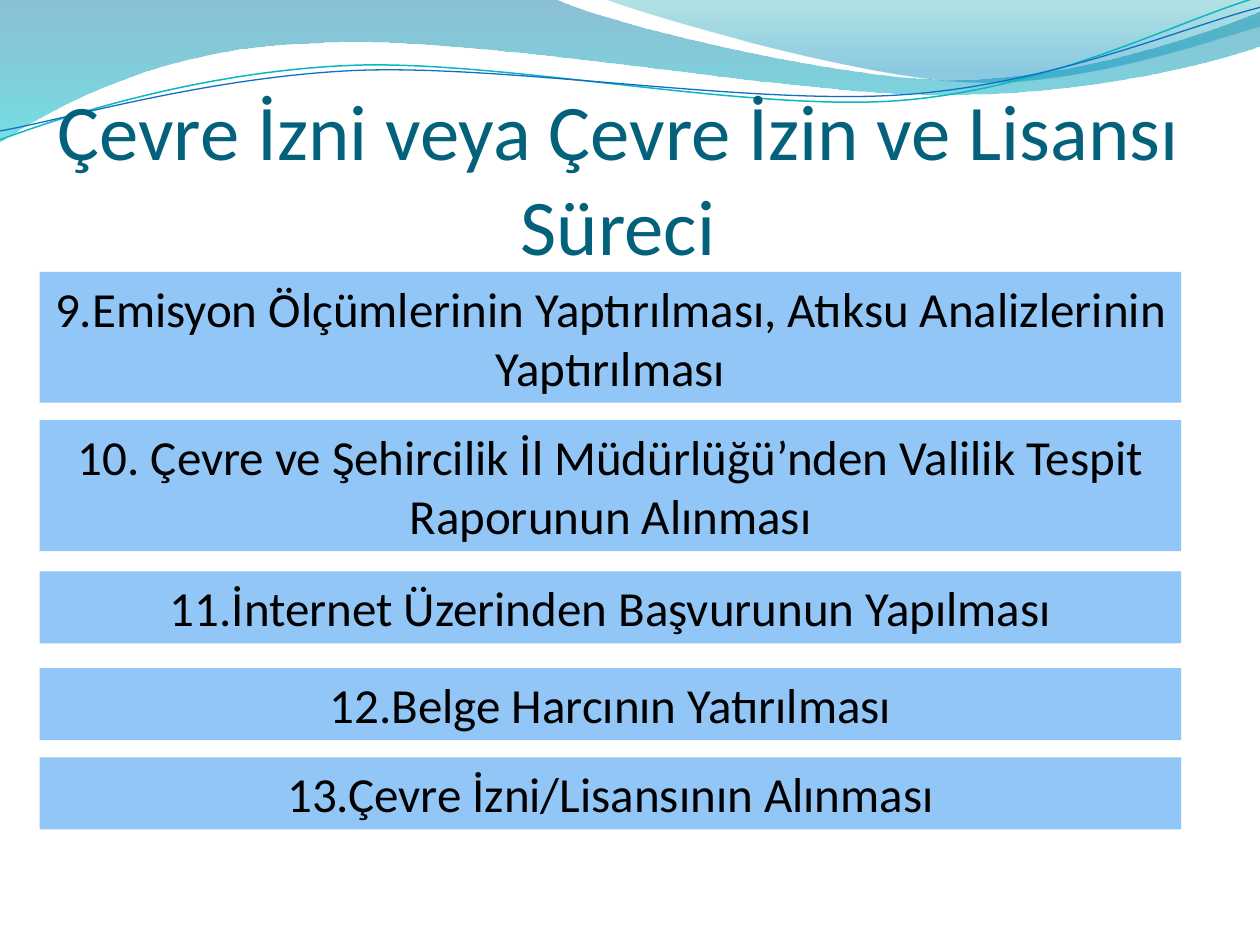
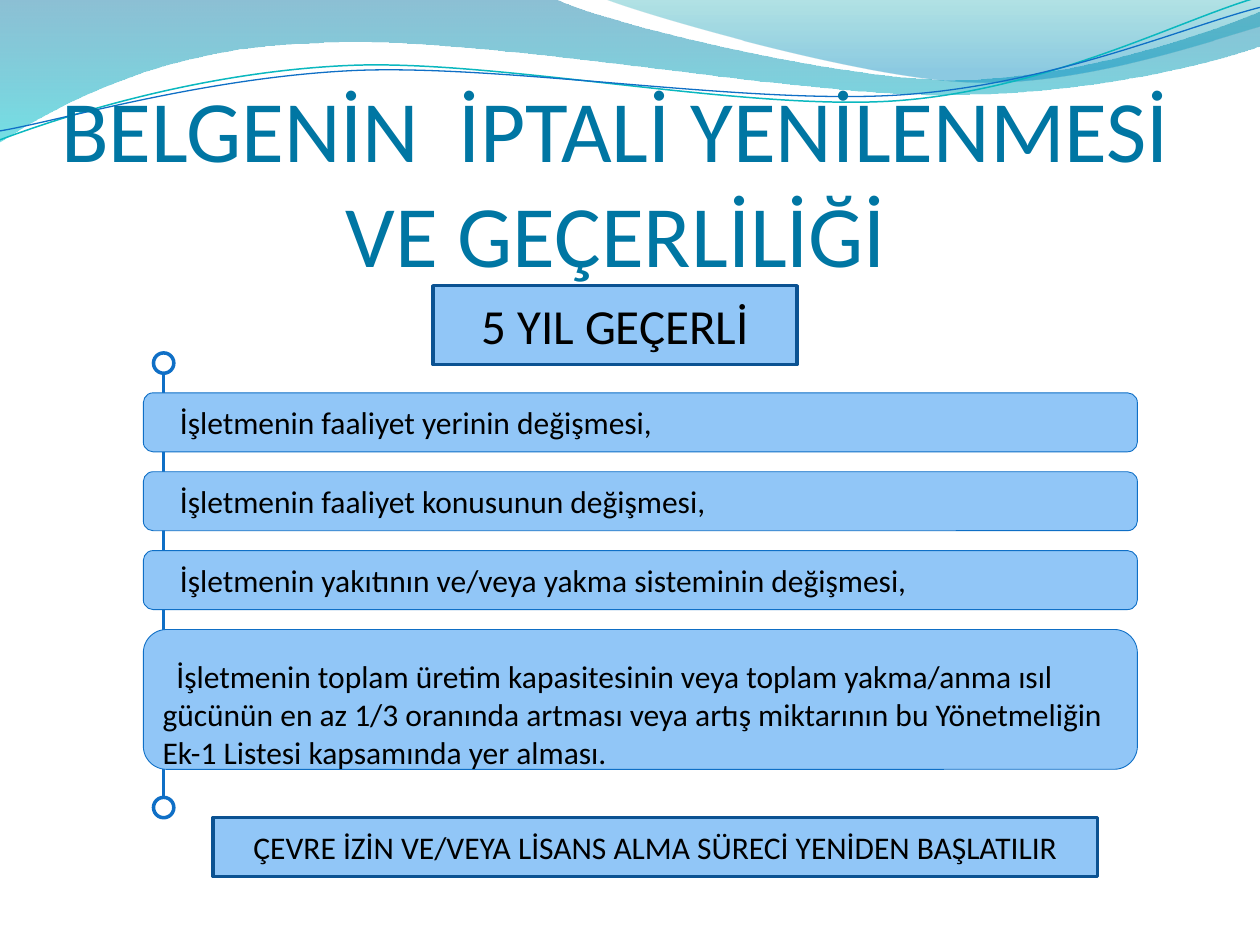
from dataclasses import dataclass
from typing import Any, Optional

from lxml import etree
from pptx import Presentation
from pptx import util as u
from pptx.dml.color import RGBColor
from pptx.enum import shapes, text
from pptx.oxml import ns

PALE_BLUE = RGBColor(0x91, 0xC6, 0xF7)
BLUE = RGBColor(0x0F, 0x6F, 0xC6)
DARK_BLUE = RGBColor(0x0B, 0x52, 0x92)
TEAL = RGBColor(0x0A, 0xB8, 0xBF)
PETROL = RGBColor(0x04, 0x61, 0x7B)
TITLE_BLUE = RGBColor(0x00, 0x76, 0xA3)
BLACK = RGBColor(0, 0, 0)
WHITE = RGBColor(0xFF, 0xFF, 0xFF)
WAVE_BLUE, WAVE_CYAN = RGBColor(0x00, 0x74, 0xA1), RGBColor(0x00, 0xC6, 0xCF)
CREST_GREEN, CREST_BLUE = RGBColor(0x00, 0xA1, 0xA9), RGBColor(0x00, 0x8B, 0xBF)

FONT = "Calibri"
Point = tuple[float, float]


@dataclass(frozen=True)
class GradientStop:
    position: float
    color: RGBColor
    opacity: int


@dataclass(frozen=True)
class Wave:
    """Each segment holds one point (a line) or three (a cubic curve), in cm."""
    start: Point
    segments: list[list[Point]]
    stops: tuple[GradientStop, ...] = ()
    line_color: Optional[RGBColor] = None
    line_width: float = 0


@dataclass(frozen=True)
class Box:
    """Position and size in cm; line width and font size in points."""
    left: float
    top: float
    width: float
    height: float
    wording: str = ""
    font_size: float = 28
    kind: shapes.MSO_SHAPE = shapes.MSO_SHAPE.RECTANGLE
    fill: RGBColor = PALE_BLUE
    line_color: Optional[RGBColor] = None
    line_width: float = 0
    alignment: text.PP_ALIGN = text.PP_ALIGN.CENTER
    first_indent: float = 0


WAVES = [
    Wave((0, 0), [
        [(11.18, -0.03)],
        [(12.09, 0.43), (16.87, 1.6), (19.25, 1.6)],
        [(21.67, 1.6), (24.33, 0.66), (25.4, 0.23)],
        [(25.43, 0.91)],
        [(24.97, 1.12), (22.1, 1.93), (18.95, 1.91)],
        [(15.8, 1.91), (9.7, 0.71), (6.53, 0.86)],
        [(3.28, 0.91), (1.17, 2.11), (-0.03, 2.87)],
        [(0, 0)],
    ], stops=(GradientStop(0, WAVE_BLUE, 45), GradientStop(1, WAVE_CYAN, 55))),
    Wave((12.17, -0.03), [
        [(12.93, 0.28), (17.32, 1.57), (19.53, 1.65)],
        [(21.74, 1.75), (24.41, 0.81), (25.4, 0.53)],
        [(25.4, 0)],
        [(12.17, -0.03)],
    ], stops=(GradientStop(0, CREST_GREEN, 30), GradientStop(0.8, CREST_BLUE, 45))),
    Wave((0, 2.82), [
        [(1.22, 2.36), (4.01, 1.45), (7.04, 1.32)],
        [(10.03, 1.19), (15.06, 2.26), (18.11, 2.03)],
        [(21.16, 1.8), (23.83, 0.38), (25.35, -0.05)],
    ], line_color=TEAL, line_width=0.85),
    Wave((0, 2.64), [
        [(1.19, 2.44), (4.17, 1.55), (7.19, 1.42)],
        [(10.24, 1.3), (15.16, 2.13), (18.21, 1.91)],
        [(21.23, 1.7), (23.9, 0.53), (25.4, 0.15)],
    ], line_color=BLUE, line_width=0.75),
]

STEPS = [
    (5.48, 2.64, "9.Emisyon Ölçümlerinin Yaptırılması, Atıksu Analizlerinin Yaptırılması"),
    (8.47, 2.64, "10. Çevre ve Şehircilik İl Müdürlüğü’nden Valilik Tespit Raporunun Alınması"),
    (11.52, 1.45, "11.İnternet Üzerinden Başvurunun Yapılması"),
    (13.47, 1.45, "12.Belge Harcının Yatırılması"),
    (15.27, 1.45, "13.Çevre İzni/Lisansının Alınması"),
]

CHANGES = [
    "İşletmenin faaliyet yerinin değişmesi,",
    "İşletmenin faaliyet konusunun değişmesi,",
    "İşletmenin yakıtının ve/veya yakma sisteminin değişmesi,",
]
CAPACITY_CHANGE = (
    "İşletmenin toplam üretim kapasitesinin veya toplam yakma/anma ısıl "
    "gücünün en az 1/3 oranında artması veya artış miktarının bu Yönetmeliğin "
    "Ek-1 Listesi kapsamında yer alması."
)
CHANGE_LEFT, CHANGE_WIDTH = 2.89, 20.04
CHANGE_TOP, CHANGE_HEIGHT, CHANGE_GAP = 7.92, 1.19, 0.4
CHANGE_FORMAT = {
    "font_size": 18,
    "kind": shapes.MSO_SHAPE.ROUNDED_RECTANGLE,
    "line_color": BLUE,
    "line_width": 0.5,
    "alignment": text.PP_ALIGN.LEFT,
}
FRAME_FORMAT = {"line_color": DARK_BLUE, "line_width": 2}
RAIL_X, RAIL_TOP, RAIL_BOTTOM, RING_SIZE = 3.3, 7.32, 16.28, 0.41


def set_values(target: Any, values: dict[str, Any]) -> None:
    for name, value in values.items():
        setattr(target, name, value)


def set_line(line: Any, color: Optional[RGBColor], width: float) -> None:
    if color is None:
        line.fill.background()
    else:
        line.color.rgb = color
        line.width = u.Pt(width)


def write_text(shape: Any, wording: str, size: float, color: RGBColor,
               alignment: text.PP_ALIGN, frame_values: dict[str, Any]) -> Any:
    frame = shape.text_frame
    set_values(frame, {"word_wrap": True, **frame_values})
    paragraph = frame.paragraphs[0]
    paragraph.alignment = alignment
    run = paragraph.add_run()
    run.text = wording
    set_values(run.font, {"name": FONT, "size": u.Pt(size)})
    run.font.color.rgb = color
    return paragraph


def fill_gradient(shape: Any, stops: tuple[GradientStop, ...]) -> None:
    shape.fill.gradient()
    shape.fill.gradient_angle = 270
    for target, stop in zip(shape.fill.gradient_stops, stops):
        target.position = stop.position
        target.color.rgb = stop.color
    colors = shape.element.spPr.iter(ns.qn("a:srgbClr"))
    for color, stop in zip(list(colors), stops):
        etree.SubElement(color, ns.qn("a:alpha"), val=str(stop.opacity * 1000))


def bend_segments(shape: Any, segments: list[list[Point]]) -> None:
    """Join the straight lines through each curve's controls into one cubic curve."""
    lines = iter(list(shape.element.spPr.iter(ns.qn("a:lnTo"))))
    for segment in segments:
        first, *others = [next(lines) for _ in segment]
        if others:
            first.tag = ns.qn("a:cubicBezTo")
        for line in others:
            first.append(line[0])
            line.getparent().remove(line)


def add_wave(slide: Any, wave: Wave) -> Any:
    points = [wave.start] + [point for segment in wave.segments for point in segment]
    vertices = [(u.Cm(x), u.Cm(y)) for x, y in points]
    builder = slide.shapes.build_freeform(*vertices[0], scale=1.0)
    builder.add_line_segments(vertices[1:], close=bool(wave.stops))
    shape = builder.convert_to_shape()
    bend_segments(shape, wave.segments)
    shape.shadow.inherit = False
    if wave.stops:
        fill_gradient(shape, wave.stops)
    else:
        shape.fill.background()
    set_line(shape.line, wave.line_color, wave.line_width)
    return shape


def move_to_master(slide: Any, shape: Any) -> None:
    """Let every slide show the shape."""
    slide.slide_layout.slide_master.shapes.element.append(shape.element)


def add_title(slide: Any, box: Box, color: RGBColor) -> None:
    shape = slide.shapes.add_textbox(
        *(u.Cm(v) for v in (box.left, box.top, box.width, box.height)))
    write_text(shape, box.wording, box.font_size, color, box.alignment, {
        "vertical_anchor": text.MSO_ANCHOR.BOTTOM,
        "margin_left": 0, "margin_right": 0, "margin_bottom": 0,
        "margin_top": u.Cm(0.13),
    })


def add_box(slide: Any, box: Box, **frame_values: Any) -> None:
    shape = slide.shapes.add_shape(
        box.kind, *(u.Cm(v) for v in (box.left, box.top, box.width, box.height)))
    shape.shadow.inherit = False
    shape.fill.solid()
    shape.fill.fore_color.rgb = box.fill
    set_line(shape.line, box.line_color, box.line_width)
    if box.wording:
        values = {"vertical_anchor": text.MSO_ANCHOR.MIDDLE, **frame_values}
        paragraph = write_text(shape, box.wording, box.font_size, BLACK,
                               box.alignment, values)
        if box.first_indent:
            indent = str(u.Cm(box.first_indent))
            paragraph._p.get_or_add_pPr().set("indent", indent)


def add_rail(slide: Any) -> None:
    rail = slide.shapes.add_connector(
        shapes.MSO_CONNECTOR.STRAIGHT,
        *(u.Cm(v) for v in (RAIL_X, RAIL_TOP, RAIL_X, RAIL_BOTTOM)))
    set_line(rail.line, BLUE, 1.75)
    etree.SubElement(rail.element.spPr, ns.qn("a:effectLst"))


def fill_process_slide(slide: Any) -> None:
    add_title(slide, Box(0.51, 1.58, 23.9, 3.89,
                         "Çevre İzni veya Çevre İzin ve Lisansı Süreci", 45), PETROL)
    for top, height, wording in STEPS:
        add_box(slide, Box(0.8, top, 23.01, height, wording))


def fill_validity_slide(slide: Any) -> None:
    add_title(slide, Box(0.99, 1.78, 22.86, 3.96,
                         "BELGENİN  İPTALİ YENİLENMESİ VE GEÇERLİLİĞİ", 50), TITLE_BLUE)
    add_box(slide, Box(8.73, 5.76, 7.34, 1.59, "5 YIL GEÇERLİ", **FRAME_FORMAT))
    add_rail(slide)
    top = CHANGE_TOP
    for wording in CHANGES:
        add_box(slide, Box(CHANGE_LEFT, top, CHANGE_WIDTH, CHANGE_HEIGHT, wording,
                           first_indent=0.43, **CHANGE_FORMAT))
        top += CHANGE_HEIGHT + CHANGE_GAP
    add_box(slide, Box(CHANGE_LEFT, top, CHANGE_WIDTH, 2.82, CAPACITY_CHANGE,
                       first_indent=0.28, **CHANGE_FORMAT),
            vertical_anchor=text.MSO_ANCHOR.TOP,
            margin_top=u.Cm(0.42), margin_bottom=0)
    add_box(slide, Box(4.3, 16.48, 17.83, 1.19,
                       "ÇEVRE İZİN VE/VEYA LİSANS ALMA SÜRECİ YENİDEN BAŞLATILIR",
                       18, **FRAME_FORMAT))
    for center in (RAIL_TOP, RAIL_BOTTOM):
        add_box(slide, Box(RAIL_X - RING_SIZE / 2, center - RING_SIZE / 2,
                           RING_SIZE, RING_SIZE, kind=shapes.MSO_SHAPE.OVAL,
                           fill=WHITE, line_color=BLUE, line_width=2))


def main() -> None:
    presentation = Presentation()
    set_values(presentation, {"slide_width": u.Cm(25.4), "slide_height": u.Cm(19.05)})
    blank = presentation.slide_layouts[6]
    process_slide = presentation.slides.add_slide(blank)
    for wave in WAVES:
        move_to_master(process_slide, add_wave(process_slide, wave))
    fill_process_slide(process_slide)
    fill_validity_slide(presentation.slides.add_slide(blank))
    presentation.save("out.pptx")


if __name__ == "__main__":
    main()
